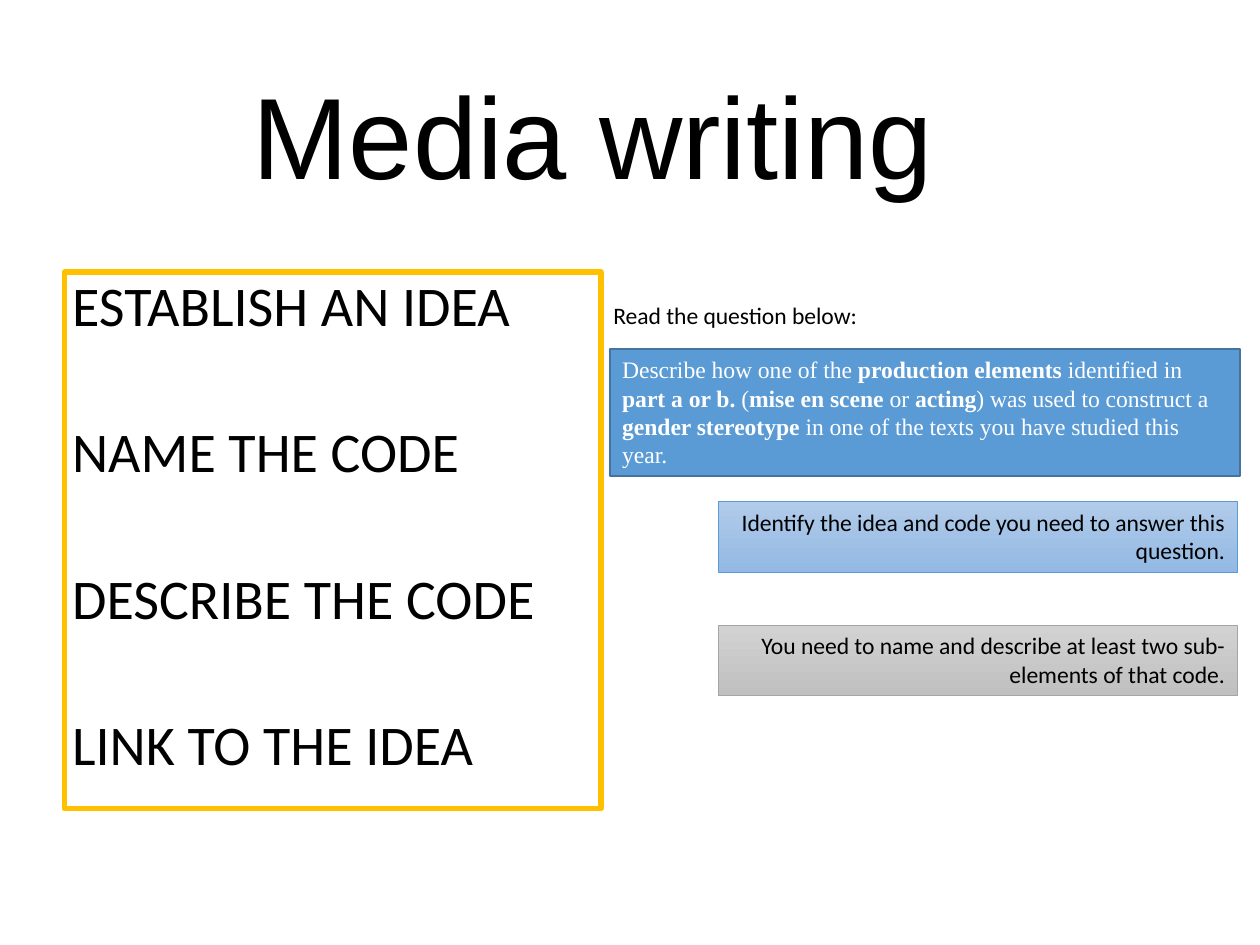
import pptx
import pptx.util
import pptx.dml.color
import pptx.enum.shapes
import pptx.enum.text

Pt = pptx.util.Pt
ALIGN = pptx.enum.text.PP_ALIGN
ANCHOR = pptx.enum.text.MSO_ANCHOR

COLORS = {
    "black": "000000",
    "white": "FFFFFF",
    "gold": "FFC000",
    "blue": "5B9BD5",
    "blue edge": "43739E",
    "blue top": "B1CBE9",
    "blue bottom": "93B9E4",
    "gray edge": "A5A5A5",
    "gray top": "D2D2D2",
    "gray bottom": "C0C0C0",
}


def apply(target, values):
    for name, value in values.items():
        setattr(target, name, value)


def color(name):
    return pptx.dml.color.RGBColor.from_string(COLORS[name])


class SlideBuilder:
    font = {"name": "Calibri", "size": Pt(13.5)}
    frame = {
        "word_wrap": True,
        "vertical_anchor": ANCHOR.TOP,
        "margin_left": Pt(7.2),
        "margin_right": Pt(7.2),
        "margin_top": Pt(3.6),
        "margin_bottom": Pt(3.6),
    }

    def __init__(self, slide):
        self.slide = slide

    def fill_text(self, shape, paragraphs, font={}, frame={}, layout={}, ink="black", gap=0):
        text_frame = shape.text_frame
        apply(text_frame, self.frame | frame)
        for index, runs in enumerate(paragraphs):
            paragraph = text_frame.add_paragraph() if index else text_frame.paragraphs[0]
            spacing = {"space_before": Pt(gap if index else 0)}
            apply(paragraph, {"alignment": ALIGN.LEFT} | spacing | layout)
            for text, bold in runs:
                run = paragraph.add_run()
                run.text = text
                apply(run.font, self.font | {"bold": bold} | font)
                run.font.color.rgb = color(ink)

    def text(self, box, text, **style):
        shape = self.slide.shapes.add_textbox(*map(Pt, box))
        self.fill_text(shape, [[(text, False)]], **style)

    def panel(self, box, paragraphs, fills, edge, edge_width, **style):
        rectangle = pptx.enum.shapes.MSO_SHAPE.RECTANGLE
        shape = self.slide.shapes.add_shape(rectangle, *map(Pt, box))
        shape.shadow.inherit = False
        if len(fills) == 1:
            shape.fill.solid()
            shape.fill.fore_color.rgb = color(fills[0])
        else:
            shape.fill.gradient()
            shape.fill.gradient_angle = 270
            for stop, name in zip(shape.fill.gradient_stops, fills):
                stop.color.rgb = color(name)
        shape.line.color.rgb = color(edge)
        shape.line.width = Pt(edge_width)
        self.fill_text(shape, paragraphs, **style)


def main():
    presentation = pptx.Presentation()
    apply(presentation, {"slide_width": Pt(720), "slide_height": Pt(540)})
    builder = SlideBuilder(presentation.slides.add_slide(presentation.slide_layouts[6]))

    builder.text(
        (28.5, 28.8, 620.6, 104.4), "Media writing",
        font={"name": "Arial", "size": Pt(66)},
        frame={"vertical_anchor": ANCHOR.MIDDLE},
        layout={"alignment": ALIGN.CENTER, "line_spacing": 0.9},
    )

    steps = ["ESTABLISH AN IDEA", "NAME THE CODE", "DESCRIBE THE CODE", "LINK TO THE IDEA"]
    builder.panel(
        (36.7, 155.5, 306.7, 306.7), [[(step, False)] for step in steps],
        ["white"], "gold", 3,
        font={"size": Pt(32)}, frame={"margin_left": Pt(4.5)},
        layout={"line_spacing": 0.9}, gap=49,
    )

    question = [
        ("Describe how one of the ", False),
        ("production elements", True),
        (" identified in ", False),
        ("part a or b. ", True),
        ("(", False),
        ("mise en scene ", True),
        ("or ", False),
        ("acting", True),
        (") was used to construct a ", False),
        ("gender stereotype", True),
        (" in one of the texts you have studied this year.", False),
    ]
    builder.panel(
        (348.5, 199.4, 360, 72.7), [question], ["blue"], "blue edge", 1,
        font={"name": "Times New Roman"}, ink="white",
    )
    builder.text(
        (343.4, 168.5, 156.2, 23.8), "Read the question below:", frame={"word_wrap": False},
    )

    hints = [
        ("blue", "blue", "Identify the idea and code you need to answer this question."),
        ("gray", "gray edge", "You need to name and describe at least two sub-elements of that code."),
    ]
    for index, (tone, edge, text) in enumerate(hints):
        builder.panel(
            (410.4, 286.6 + index * 70.6, 296.6, 40.3), [[(text, False)]],
            [f"{tone} top", f"{tone} bottom"], edge, 0.5,
            layout={"alignment": ALIGN.RIGHT},
        )

    presentation.save("out.pptx")


if __name__ == "__main__":
    main()
